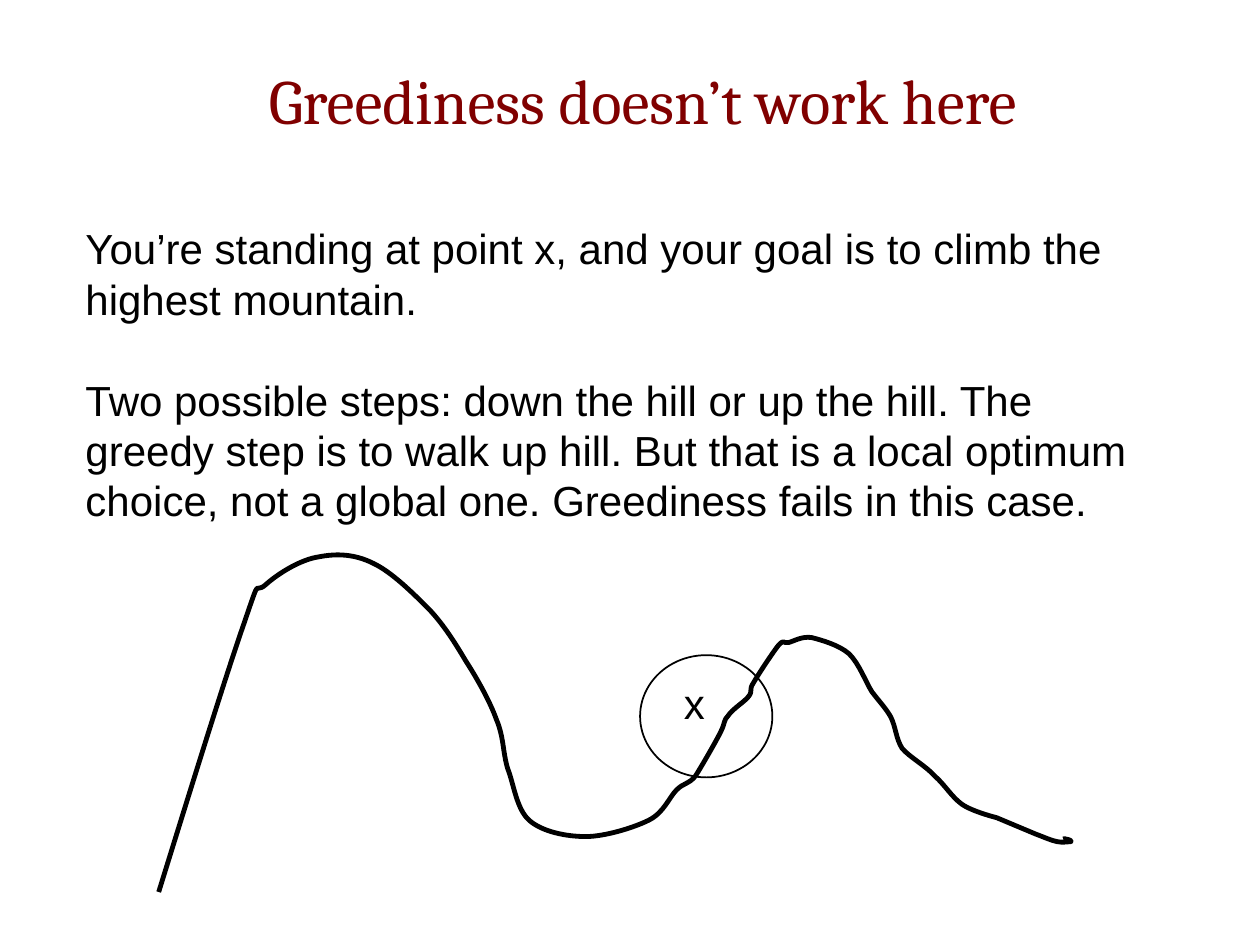
import lxml.etree
import pptx
import pptx.dml.color
import pptx.enum.shapes
import pptx.enum.text
import pptx.oxml.ns
import pptx.util

PX = 9144
THEME = {
    "title_font": "Cambria",
    "body_font": "Arial",
    "title_size": pptx.util.Pt(36),
    "body_size": pptx.util.Pt(24),
    "line_pitch": pptx.util.Pt(28.8),
    "title_color": pptx.dml.color.RGBColor(0x80, 0, 0),
    "ink": pptx.dml.color.RGBColor(0, 0, 0),
    "ridge_width": pptx.util.Pt(2.75),
    "circle_width": pptx.util.Pt(1),
}


def add_text(page, bounds, paragraphs, font, size, color):
    box = page.shapes.add_textbox(*[value * PX for value in bounds])
    frame = box.text_frame
    frame.word_wrap = True
    for index, text in enumerate(paragraphs):
        para = frame.paragraphs[0] if index == 0 else frame.add_paragraph()
        para.text = text
        para.font.name = font
        para.font.size = size
        para.font.color.rgb = color
    return frame


deck = pptx.Presentation()
deck.slide_width = 1000 * PX
deck.slide_height = 750 * PX
page = deck.slides.add_slide(deck.slide_layouts[6])

title = add_text(page, (66, 25, 892, 108), ["Greediness doesn’t work here"],
                 THEME["title_font"], THEME["title_size"], THEME["title_color"])
title.vertical_anchor = pptx.enum.text.MSO_ANCHOR.MIDDLE
title.margin_left = title.margin_top = title.margin_bottom = 6 * PX
title.margin_right = 10 * PX
title.paragraphs[0].alignment = pptx.enum.text.PP_ALIGN.CENTER

ridge_start = (126, 708)
ridge_segments = [
    ((153, 621), (180, 534), (194, 494)),
    ((208, 453), (201, 473), (211, 464)),
    ((221, 455), (239, 444), (253, 442)),
    ((268, 439), (282, 440), (296, 447)),
    ((311, 454), (328, 471), (341, 484)),
    ((353, 497), (361, 510), (370, 525)),
    ((379, 539), (389, 557), (394, 571)),
    ((400, 585), (399, 597), (403, 610)),
    ((408, 623), (410, 642), (420, 651)),
    ((430, 660), (449, 664), (465, 664)),
    ((480, 664), (503, 657), (515, 651)),
    ((527, 645), (531, 633), (537, 627)),
    ((543, 621), (546, 623), (552, 616)),
    ((557, 608), (568, 589), (572, 581)),
    ((576, 573), (574, 572), (578, 568)),
    ((581, 563), (591, 557), (594, 553)),
    ((598, 548), (594, 548), (598, 542)),
    ((602, 535), (614, 517), (618, 512)),
    ((623, 507), (621, 511), (626, 510)),
    ((630, 509), (636, 505), (644, 506)),
    ((652, 508), (666, 512), (674, 519)),
    ((682, 527), (687, 541), (692, 549)),
    ((698, 557), (703, 562), (707, 569)),
    ((711, 577), (711, 586), (716, 594)),
    ((722, 601), (735, 608), (742, 616)),
    ((750, 623), (755, 632), (763, 638)),
    ((771, 644), (791, 649), (791, 649)),
    ((822, 662),),
    ((830, 665), (834, 667), (839, 668)),
    ((843, 669), (849, 668), (850, 668)),
    ((851, 667), (847, 666), (846, 666)),
    ((845, 665), (845, 666), (844, 666)),
]
ridge_ends = [segment[-1] for segment in ridge_segments]
ridge_left = min(x for x, y in [ridge_start, *ridge_ends])
ridge_top = min(y for x, y in [ridge_start, *ridge_ends])

builder = page.shapes.build_freeform(*ridge_start, scale=PX)
builder.add_line_segments(ridge_ends, close=False)
ridge = builder.convert_to_shape()

qn = pptx.oxml.ns.qn
lines = list(ridge.element.iter(qn("a:lnTo")))
for line, segment in zip(lines, ridge_segments):
    if len(segment) == 3:
        curve = lxml.etree.Element(qn("a:cubicBezTo"))
        for x, y in segment:
            lxml.etree.SubElement(curve, qn("a:pt"), x=str(x - ridge_left), y=str(y - ridge_top))
        line.getparent().replace(line, curve)

explanation = add_text(page, (58, 172, 858, 252), [
    "You’re standing at point x, and your goal is to climb the highest mountain.",
    "Two possible steps: down the hill or up the hill. The greedy step is to walk up hill. "
    "But that is a local optimum choice, not a global one. Greediness fails in this case.",
], THEME["body_font"], THEME["body_size"], THEME["ink"])
for para in explanation.paragraphs:
    para.line_spacing = THEME["line_pitch"]
explanation.paragraphs[1].space_before = THEME["line_pitch"]

marker = add_text(page, (533, 533, 67, 51), ["x"],
                  THEME["body_font"], THEME["body_size"], THEME["ink"])
marker.paragraphs[0].line_spacing = THEME["line_pitch"]

circle = page.shapes.add_shape(
    pptx.enum.shapes.MSO_SHAPE.OVAL, 508 * PX, 520 * PX, 105 * PX, 97 * PX)

for outline, width in ((ridge, THEME["ridge_width"]), (circle, THEME["circle_width"])):
    outline.shadow.inherit = False
    outline.fill.background()
    outline.line.color.rgb = THEME["ink"]
    outline.line.width = width

deck.save("out.pptx")
